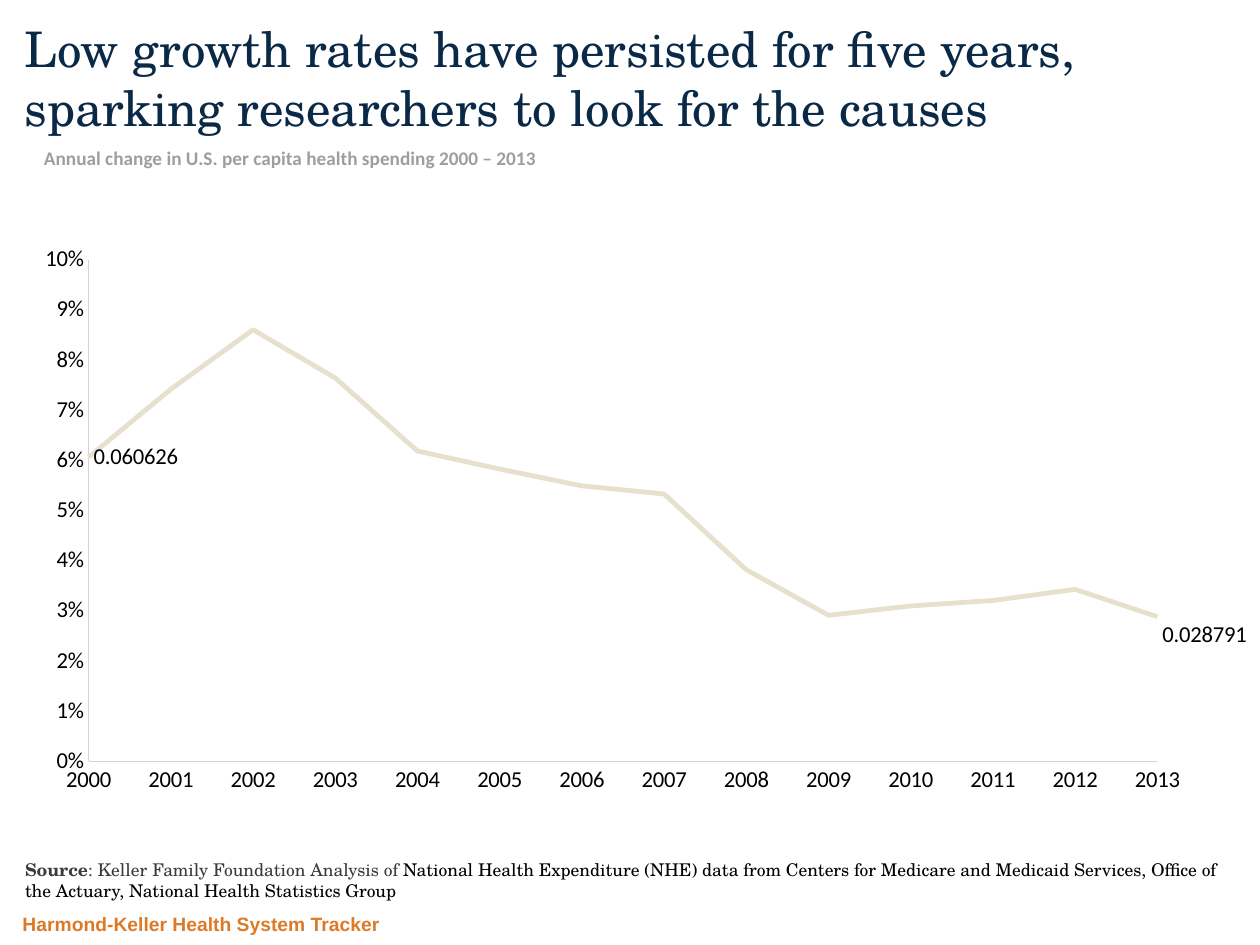
from lxml.etree import SubElement
from pptx import Presentation
from pptx.chart.data import CategoryChartData
from pptx.dml.color import RGBColor
from pptx.enum.chart import XL_CHART_TYPE, XL_LABEL_POSITION, XL_TICK_MARK
from pptx.enum.text import MSO_ANCHOR
from pptx.oxml.ns import qn
from pptx.util import Inches, Pt

# Content
COLORS = {"navy": "092947", "orange": "DC7A27", "charcoal": "3C3A3B",
          "gray": "9E9E9E", "axis": "D3D3D3", "sand": "E6E0CD", "black": "000000"}
SERIF, SANS, BRAND = "TeX Gyre Schola", "Calibri", "Arial"

# Each text: box, anchor, font, size, runs of (words, colour, bold)
TEXTS = [
    ((0.08, 7.17, 7.98, 0.3), MSO_ANCHOR.BOTTOM, BRAND, 11,
     [("Harmond-Keller Health System Tracker", "orange", True)]),
    ((0.1, 6.4, 9.82, 0.8), MSO_ANCHOR.BOTTOM, SERIF, 10,
     [("Source", "charcoal", True),
      (": Keller Family Foundation Analysis of ", "charcoal", False),
      ("National Health Expenditure (NHE) data from Centers for Medicare and "
       "Medicaid Services, Office of the Actuary, National Health Statistics Group",
       "black", False)]),
    ((0.1, 0.1, 9.8, 1), MSO_ANCHOR.TOP, SERIF, 28,
     [("Low growth rates have persisted for five years, "
       "sparking researchers to look for the causes", "navy", False)]),
    ((0.25, 1.11, 5.92, 0.29), MSO_ANCHOR.TOP, SANS, 11,
     [("Annual change in U.S. per capita health spending 2000 – 2013", "gray", True)]),
]

FIRST_YEAR = 2000
GROWTH = [0.060626, 0.074165, 0.086019, 0.076396, 0.061837, 0.058236, 0.054886,
          0.053269, 0.03816, 0.029079, 0.030948, 0.032036, 0.034261, 0.028791]
CHART_BOX = (0.08, 1.4, 9.82, 4.9)
PLOT_SHARES = {"x": 0.064, "y": 0.135, "w": 0.87, "h": 0.813}
LAST_LABEL_SHIFT = {"x": 0, "y": 0.03}


def color(name):
    return RGBColor.from_string(COLORS[name])


def add_text(slide, box, anchor, font, size, runs):
    frame = slide.shapes.add_textbox(*map(Inches, box)).text_frame
    frame.word_wrap = True
    frame.vertical_anchor = anchor
    paragraph = frame.paragraphs[0]
    paragraph.font.name, paragraph.font.size = font, Pt(size)
    for words, shade, bold in runs:
        run = paragraph.add_run()
        run.text = words
        run.font.bold = bold
        run.font.color.rgb = color(shade)


def set_layout(parent, index, shares, modes=()):
    for old in parent.findall(qn("c:layout")):
        parent.remove(old)
    layout = SubElement(parent, qn("c:layout"))
    parent.insert(index, layout)
    manual = SubElement(layout, qn("c:manualLayout"))
    for tag, value in [*modes, *shares.items()]:
        SubElement(manual, qn(f"c:{tag}")).set("val", str(value))


def start_line_on_axis(plot_area):
    value_axis = plot_area.find(qn("c:valAx"))
    cross_between = SubElement(value_axis, qn("c:crossBetween"))
    cross_between.set("val", "midCat")
    value_axis.find(qn("c:crosses")).addnext(cross_between)


def style_axis(axis):
    axis.major_tick_mark = axis.minor_tick_mark = XL_TICK_MARK.NONE
    axis.has_major_gridlines = False
    axis.format.line.color.rgb = color("axis")
    axis.format.line.width = Pt(0.75)


def add_growth_chart(slide):
    data = CategoryChartData(number_format="General")
    data.categories = [str(FIRST_YEAR + i) for i in range(len(GROWTH))]
    data.add_series("Series 1", GROWTH)
    chart = slide.shapes.add_chart(
        XL_CHART_TYPE.LINE, *map(Inches, CHART_BOX), data).chart
    chart.has_legend = chart.has_title = False
    chart.font.name, chart.font.size = SANS, Pt(13)
    chart.font.color.rgb = color("black")

    # Axes and plot area
    style_axis(chart.category_axis)
    growth_axis = chart.value_axis
    style_axis(growth_axis)
    growth_axis.minimum_scale, growth_axis.maximum_scale = 0, 0.1
    growth_axis.major_unit = 0.01
    growth_axis.tick_labels.number_format = "0%"
    growth_axis.tick_labels.number_format_is_linked = False
    plot_area = chart.element.find(".//" + qn("c:plotArea"))
    start_line_on_axis(plot_area)
    set_layout(plot_area, 0, PLOT_SHARES,
               [("layoutTarget", "inner"), ("xMode", "edge"), ("yMode", "edge")])

    # Line, labelled at both ends
    chart.plots[0].vary_by_categories = False
    line = chart.plots[0].series[0]
    line.smooth = False
    line.format.line.color.rgb = color("sand")
    line.format.line.width = Pt(2.75)
    line.data_labels.show_value = False
    last = len(GROWTH) - 1
    for index in (0, last):
        line.points[index].data_label.position = XL_LABEL_POSITION.RIGHT
    last_label = line.data_labels._element.findall(qn("c:dLbl"))[-1]
    set_layout(last_label, 1, LAST_LABEL_SHIFT)


def main():
    deck = Presentation()
    deck.slide_width, deck.slide_height = Inches(10), Inches(7.5)
    slide = deck.slides.add_slide(deck.slide_layouts[6])
    add_growth_chart(slide)
    for text in TEXTS:
        add_text(slide, *text)
    deck.save("out.pptx")


if __name__ == "__main__":
    main()
